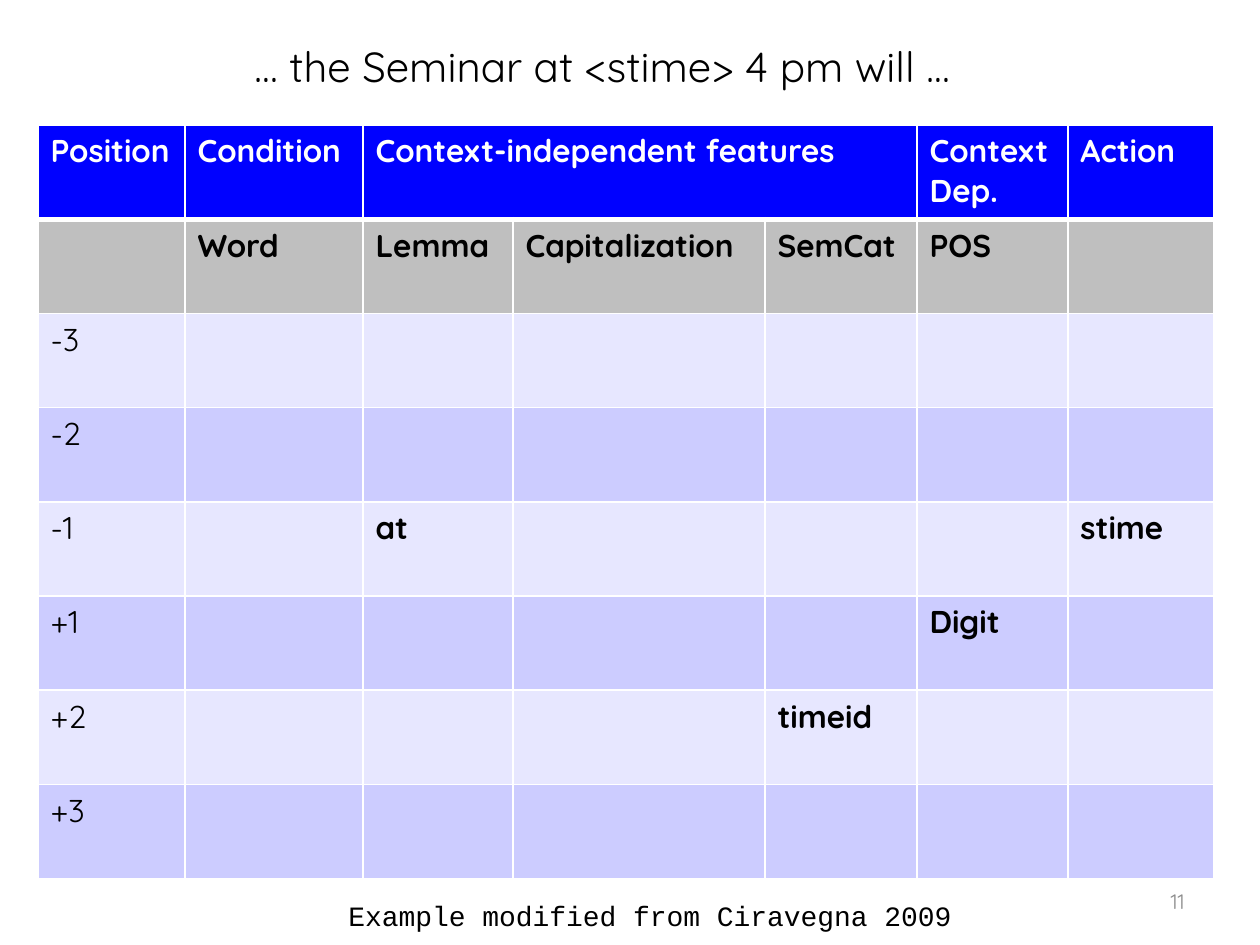
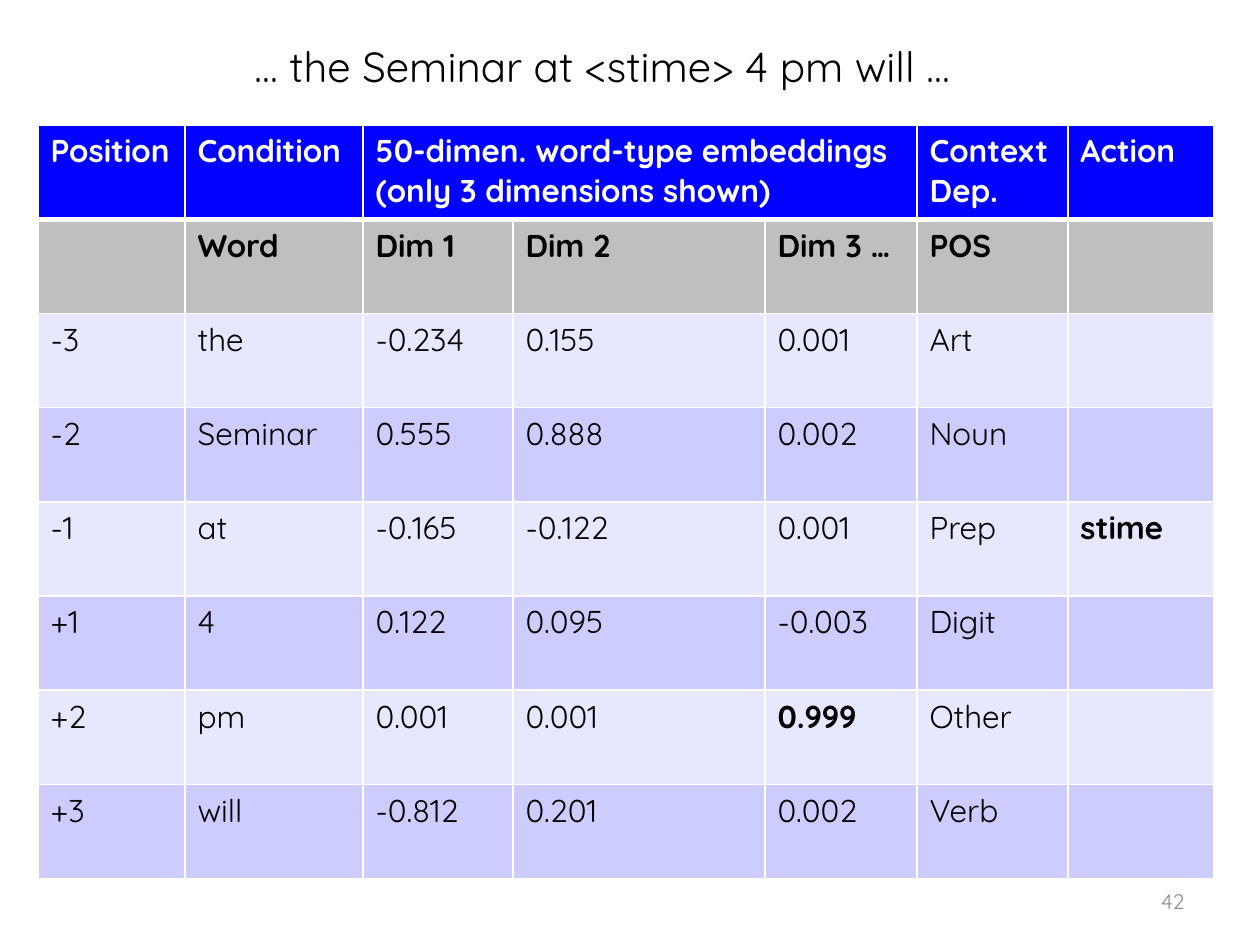
from lxml import etree
from pptx import Presentation
from pptx.dml.color import RGBColor
from pptx.enum.text import MSO_ANCHOR, PP_ALIGN
from pptx.oxml.ns import qn
from pptx.util import Pt

PX = 914400 / 126
LEFT, RIGHT = PP_ALIGN.LEFT, PP_ALIGN.RIGHT
TOP, MIDDLE = MSO_ANCHOR.TOP, MSO_ANCHOR.MIDDLE

BLACK = RGBColor(0x00, 0x00, 0x00)
WHITE = RGBColor(0xFF, 0xFF, 0xFF)
GREY_TEXT = RGBColor(0x8C, 0x8C, 0x8C)
HEADER_BLUE = RGBColor(0x00, 0x01, 0xFF)
SUBHEADER_GREY = RGBColor(0xBF, 0xBF, 0xBF)
BANDS = RGBColor(0xE7, 0xE7, 0xFF), RGBColor(0xCC, 0xCC, 0xFF)

BODY_FONT, NOTE_FONT = "Quicksand", "Courier New"
PAGE_SIZE = 1260, 945
TITLE_BOX = 242, 34, 974, 63
TABLE_BOX = 38, 125, 1176, 754
NOTE_BOX = 336, 892, 644, 47
NUMBER_BOX = 903, 876, 294, 50
COLUMN_WIDTHS = 147, 178, 150, 252, 152, 151, 146
FEATURE_COLUMNS = 2, 4

TITLE = "… the Seminar at <stime> 4 pm will …"
POSITIONS = "-3", "-2", "-1", "+1", "+2", "+3"

RULE_FEATURES = "Context-independent features"
RULE_NAMES = "Lemma", "Capitalization", "SemCat"
RULE_CELLS = {(4, 2): "at", (4, 6): "stime", (5, 5): "Digit", (6, 4): "timeid"}

EMBEDDING_FEATURES = "50-dimen. word-type embeddings (only 3 dimensions shown)"
EMBEDDING_NAMES = "Dim 1", "Dim 2", "Dim 3 …"
EMBEDDING_ROWS = (
    ("the", "-0.234", "0.155", "0.001", "Art", ""),
    ("Seminar", "0.555", "0.888", "0.002", "Noun", ""),
    ("at", "-0.165", "-0.122", "0.001", "Prep", "stime"),
    ("4", "0.122", "0.095", "-0.003", "Digit", ""),
    ("pm", "0.001", "0.001", "0.999", "Other", ""),
    ("will", "-0.812", "0.201", "0.002", "Verb", ""),
)
EMBEDDING_BOLD = {(4, 6), (6, 4)}


def emu(*lengths):
    """Turn lengths in px into EMU."""
    return [round(length * PX) for length in lengths]


def format_runs(frame, size, color, font=BODY_FONT, bold=False):
    """Give every run of a text frame the same look."""
    for para in frame.paragraphs:
        for span in para.runs:
            span.font.name = font
            span.font.size = Pt(size)
            span.font.bold = bold
            span.font.color.rgb = color


def add_text(page, box, text, size, color=BLACK, font=BODY_FONT, align=LEFT, anchor=TOP):
    """Add a wrapping text box."""
    frame = page.shapes.add_textbox(*emu(*box)).text_frame
    frame.word_wrap = True
    frame.vertical_anchor = anchor
    frame.text = text
    frame.paragraphs[0].alignment = align
    format_runs(frame, size, color, font)


def set_borders(cell, top, bottom):
    """Draw white cell borders, with top and bottom widths in points."""
    properties = cell._tc.get_or_add_tcPr()
    widths = {"a:lnL": 1, "a:lnR": 1, "a:lnT": top, "a:lnB": bottom}
    for index, (tag, width) in enumerate(widths.items()):
        line = etree.Element(qn(tag), w=str(Pt(width)))
        fill = etree.SubElement(line, qn("a:solidFill"))
        etree.SubElement(fill, qn("a:srgbClr"), val=str(WHITE))
        properties.insert(index, line)


def style_cell(cell, row, bold):
    """Colour a cell by its row and format its text."""
    fills = HEADER_BLUE, SUBHEADER_GREY
    cell.fill.solid()
    cell.fill.fore_color.rgb = fills[row] if row < 2 else BANDS[row % 2]
    set_borders(cell, top=3 if row == 1 else 1, bottom=3 if row == 0 else 1)
    format_runs(cell.text_frame, 18, WHITE if row == 0 else BLACK, bold=bold)


def add_feature_table(page, box, features, names, body, bold_cells):
    """Add the table of token positions and their features."""
    rows = [
        ("Position", "Condition", features, "", "", "Context Dep.", "Action"),
        ("", "Word", *names, "POS", ""),
        *((position, *values) for position, values in zip(POSITIONS, body)),
    ]
    table = page.shapes.add_table(len(rows), len(COLUMN_WIDTHS), *emu(*box)).table
    table.horz_banding = False
    for column, width in zip(table.columns, emu(*COLUMN_WIDTHS)):
        column.width = width
    for row, texts in enumerate(rows):
        table.rows[row].height = emu(box[3] / len(rows))[0]
        for column, text in enumerate(texts):
            cell = table.cell(row, column)
            if text:
                cell.text_frame.text = text
            style_cell(cell, row, bold=row < 2 or (row, column) in bold_cells)
    first, last = FEATURE_COLUMNS
    table.cell(0, first).merge(table.cell(0, last))


def add_table_page(deck, number, *table_content):
    """Add a page with title, feature table and page number."""
    page = deck.slides.add_slide(deck.slide_layouts[6])
    add_text(page, NUMBER_BOX, str(number), 12, GREY_TEXT, align=RIGHT, anchor=MIDDLE)
    add_feature_table(page, TABLE_BOX, *table_content)
    add_text(page, TITLE_BOX, TITLE, 24)
    return page


def main():
    """Build the deck."""
    deck = Presentation()
    deck.slide_width, deck.slide_height = emu(*PAGE_SIZE)
    rule_rows = [
        [RULE_CELLS.get((row, column), "") for column in range(1, len(COLUMN_WIDTHS))]
        for row in range(2, 2 + len(POSITIONS))
    ]
    rule_page = add_table_page(deck, 11, RULE_FEATURES, RULE_NAMES, rule_rows, RULE_CELLS)
    add_text(rule_page, NOTE_BOX, "Example modified from Ciravegna 2009", 16, font=NOTE_FONT)
    add_table_page(
        deck, 42, EMBEDDING_FEATURES, EMBEDDING_NAMES, EMBEDDING_ROWS, EMBEDDING_BOLD
    )
    deck.save("out.pptx")


if __name__ == "__main__":
    main()
